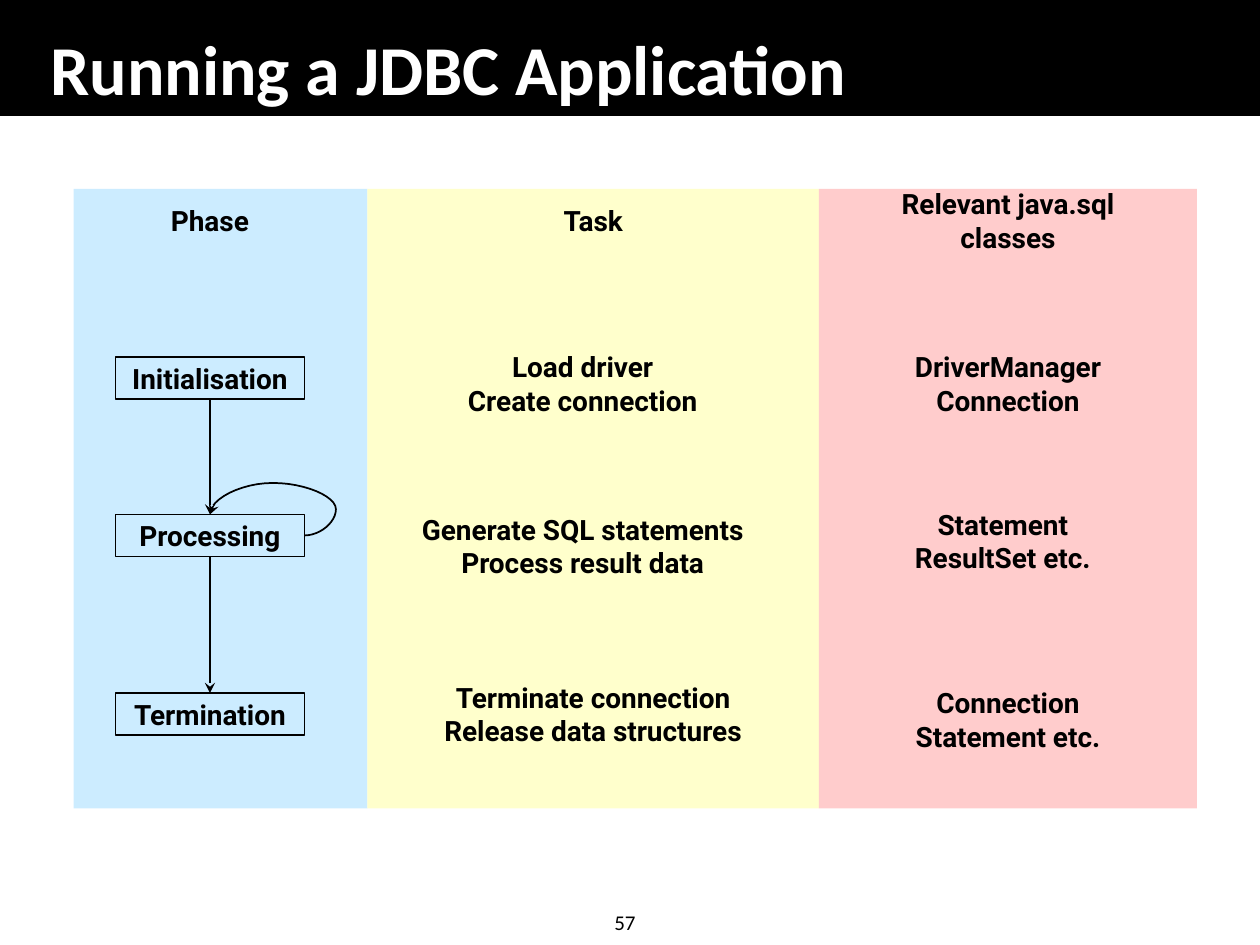
from lxml.etree import SubElement
from pptx import Presentation
from pptx.dml.color import RGBColor
from pptx.enum.shapes import MSO_CONNECTOR, MSO_SHAPE
from pptx.enum.text import MSO_ANCHOR, PP_ALIGN
from pptx.oxml.ns import qn
from pptx.util import Pt

COLOURS = {
    "black": "000000",
    "white": "FFFFFF",
    "phase": "CCECFF",
    "task": "FFFFCC",
    "classes": "FFCCCC",
}
LABEL = {"name": "Roboto", "size": Pt(16), "bold": True}
TITLE = {"name": "Calibri", "size": Pt(40), "bold": True}
NUMBER = {"name": "Calibri", "size": Pt(12), "bold": False}


def colour(name):
    return RGBColor.from_string(COLOURS[name])


def bezier(start, first, second, end, steps=12):
    """Return the points after start along a cubic curve."""
    points = []
    for step in range(1, steps + 1):
        t = step / steps
        weights = ((1 - t) ** 3, 3 * t * (1 - t) ** 2, 3 * t * t * (1 - t), t ** 3)
        corners = (start, first, second, end)
        points.append(tuple(sum(w * c[axis] for w, c in zip(weights, corners))
                            for axis in (0, 1)))
    return points


class SlideBuilder:
    def __init__(self, slide):
        self.slide = slide
        self.shapes = slide.shapes

    def set_text(self, box, lines, style, ink="black", align=PP_ALIGN.CENTER,
                 anchor=MSO_ANCHOR.MIDDLE, wrap=False):
        frame = box.text_frame
        frame.word_wrap = wrap
        frame.vertical_anchor = anchor
        for index, line in enumerate(lines):
            para = frame.paragraphs[0] if index == 0 else frame.add_paragraph()
            para.alignment = align
            span = para.add_run()
            span.text = line
            for key, value in style.items():
                setattr(span.font, key, value)
            span.font.color.rgb = colour(ink)

    def title(self, text, *place):
        box = self.shapes.title
        box.left, box.top, box.width, box.height = map(Pt, place)
        self.set_text(box, [text], TITLE, "white", PP_ALIGN.LEFT,
                      MSO_ANCHOR.BOTTOM, True)
        # Keep the title in front of the banner drawn before it.
        self.shapes._spTree.append(box._element)

    def text(self, lines, *place, style=LABEL, **layout):
        box = self.shapes.add_textbox(*map(Pt, place))
        self.set_text(box, lines, style, **layout)

    def rectangle(self, *place, fill=None, line=None):
        box = self.shapes.add_shape(MSO_SHAPE.RECTANGLE, *map(Pt, place))
        box.shadow.inherit = False
        if fill:
            box.fill.solid()
            box.fill.fore_color.rgb = colour(fill)
        else:
            box.fill.background()
        if line:
            self.outline(box, line)
        else:
            box.line.fill.background()
        return box

    def outline(self, shape, ink="black"):
        shape.line.color.rgb = colour(ink)
        shape.line.width = Pt(1)

    def finish_arrow(self, shape):
        self.outline(shape)
        properties = shape._element.spPr
        SubElement(properties.find(qn("a:ln")), qn("a:tailEnd"), type="stealth")
        SubElement(properties, qn("a:effectLst"))

    def arrow(self, *ends):
        self.finish_arrow(self.shapes.add_connector(
            MSO_CONNECTOR.STRAIGHT, *map(Pt, ends)))

    def loop_arrow(self, points):
        (x, y), *rest = [(Pt(x), Pt(y)) for x, y in points]
        builder = self.shapes.build_freeform(x, y)
        builder.add_line_segments(rest, close=False)
        loop = builder.convert_to_shape()
        loop.fill.background()
        self.finish_arrow(loop)


def main():
    deck = Presentation()
    deck.slide_width, deck.slide_height = Pt(720), Pt(540)
    page = SlideBuilder(deck.slides.add_slide(deck.slide_layouts[5]))

    page.rectangle(0, 0, 720, 66, fill="black", line="black")
    page.text(["57"], 344, 516, 30, 22, style=NUMBER,
              align=PP_ALIGN.LEFT, anchor=MSO_ANCHOR.TOP)
    page.title("Running a JDBC Application", 21.6, 15, 674, 51)

    columns = [
        ("Phase", "phase", 42, 168, 66, 108),
        ("Task", "task", 210, 258, 258, 162),
        ("Relevant java.sql classes", "classes", 468, 216, 492, 168),
    ]
    for heading, fill, left, width, text_left, text_width in columns:
        page.rectangle(left, 108, width, 354, fill=fill)
        page.text([heading], text_left, 114, text_width, 24)

    phase_left, phase_width, phase_height = 66, 108, 24
    phase_tops = {"Initialisation": 204, "Processing": 294, "Termination": 396}
    for phase, top in phase_tops.items():
        box = page.rectangle(phase_left, top, phase_width, phase_height, line="black")
        page.set_text(box, [phase], LABEL)

    middle = phase_left + phase_width / 2
    tops = list(phase_tops.values())
    for upper, lower in zip(tops, tops[1:]):
        page.arrow(middle, upper + phase_height, middle, lower)

    start, right, crest, end = (174, 306), (192, 291), (156, 276), (middle, 294)
    page.loop_arrow([
        start,
        *bezier(start, (183, 306), (192, 298.5), right),
        *bezier(right, (192, 283.5), (174, 276), crest),
        *bezier(crest, (138, 276), (120, 285), end),
    ])

    details = [
        (["Load driver", "Create connection"], 246, 198, 174, 42),
        (["Generate SQL statements", "Process result data"], 234, 294, 198, 36),
        (["Terminate connection", "Release data structures"], 234, 390, 210, 36),
        (["DriverManager", "Connection"], 492, 198, 168, 42),
        (["Statement", "ResultSet etc."], 492, 288, 162, 42),
        (["Connection", "Statement etc."], 492, 390, 168, 42),
    ]
    for lines, *place in details:
        page.text(lines, *place)

    deck.save("out.pptx")


if __name__ == "__main__":
    main()
